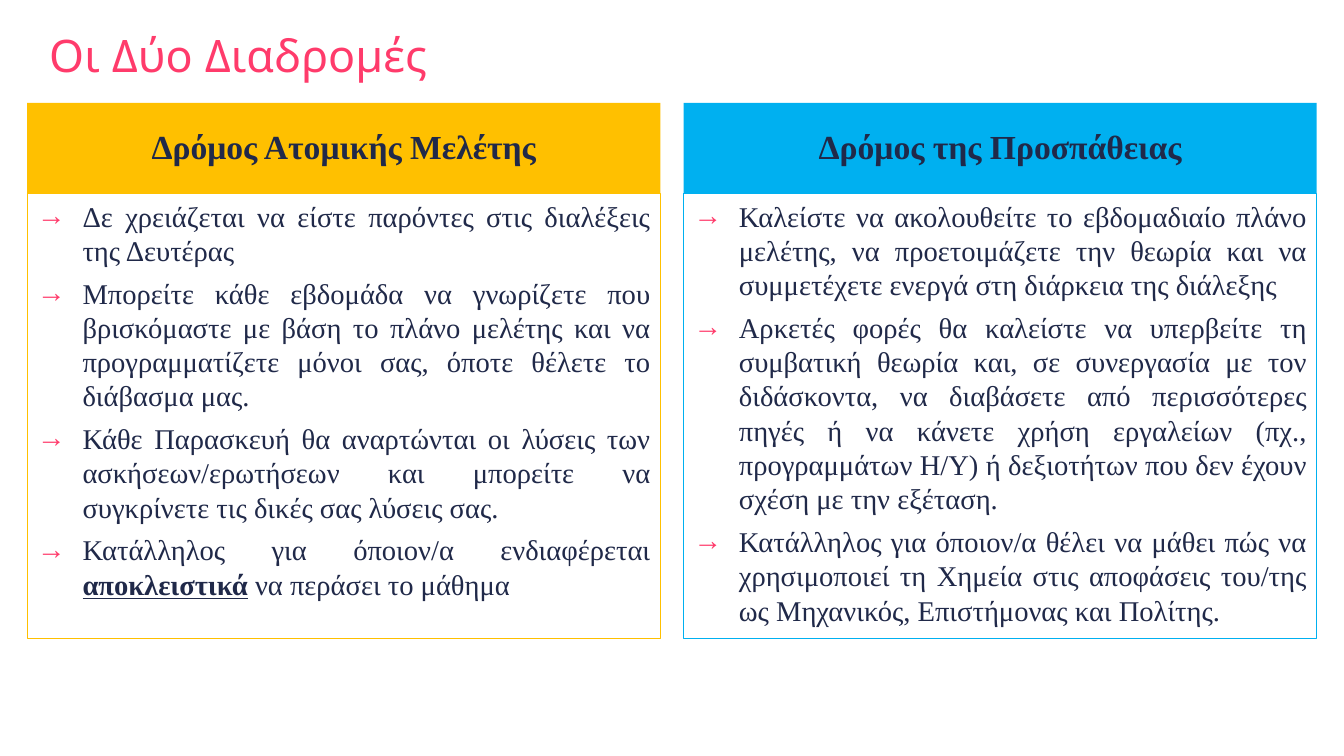
from dataclasses import dataclass
from lxml.etree import SubElement
from pptx import Presentation
from pptx.dml.color import RGBColor
from pptx.enum.shapes import MSO_SHAPE
from pptx.enum.text import MSO_ANCHOR, PP_ALIGN
from pptx.oxml.ns import qn
from pptx.util import Pt

PX = 9144


@dataclass(frozen=True)
class Theme:
    pink: str = "FF3B6B"
    navy: str = "202949"
    yellow: str = "FFC000"
    blue: str = "00B0F0"
    title_font: str = "Quicksand"
    body_font: str = "Times New Roman"
    title_size: float = 32
    heading_size: float = 24
    body_size: float = 20.4


def add_rect(s, left, top, width, height):
    sp = s.shapes.add_shape(MSO_SHAPE.RECTANGLE, left * PX, top * PX, width * PX, height * PX)
    sp.shadow.inherit = False
    sp.text_frame.word_wrap = True
    return sp


def style(font, name, size, color):
    font.name = name
    font.size = Pt(size)
    font.color.rgb = RGBColor.from_string(color)


theme = Theme()
paths = [
    (theme.yellow, "Δρόμος Ατομικής Μελέτης", [
        ["Δε χρειάζεται να είστε παρόντες στις διαλέξεις της Δευτέρας"],
        ["Μπορείτε κάθε εβδομάδα να γνωρίζετε που βρισκόμαστε με βάση το πλάνο μελέτης και να προγραμματίζετε μόνοι σας, όποτε θέλετε το διάβασμα μας."],
        ["Κάθε Παρασκευή θα αναρτώνται οι λύσεις των ασκήσεων/ερωτήσεων και μπορείτε να συγκρίνετε τις δικές σας λύσεις σας."],
        ["Κατάλληλος για όποιον/α ενδιαφέρεται ", "αποκλειστικά", " να περάσει το μάθημα"],
    ]),
    (theme.blue, "Δρόμος της Προσπάθειας", [
        ["Καλείστε να ακολουθείτε το εβδομαδιαίο πλάνο μελέτης, να προετοιμάζετε την θεωρία και να συμμετέχετε ενεργά στη διάρκεια της διάλεξης"],
        ["Αρκετές φορές θα καλείστε να υπερβείτε τη συμβατική θεωρία και, σε συνεργασία με τον διδάσκοντα, να διαβάσετε από περισσότερες πηγές ή να κάνετε χρήση εργαλείων (πχ., προγραμμάτων Η/Υ) ή δεξιοτήτων που δεν έχουν σχέση με την εξέταση."],
        ["Κατάλληλος για όποιον/α θέλει να μάθει πώς να χρησιμοποιεί τη Χημεία στις αποφάσεις του/της ως Μηχανικός, Επιστήμονας και Πολίτης."],
    ]),
]

prs = Presentation()
prs.slide_width = 1333 * PX
prs.slide_height = 750 * PX
s = prs.slides.add_slide(prs.slide_layouts[6])

tf = s.shapes.add_textbox(39 * PX, 29 * PX, 1150 * PX, 62 * PX).text_frame
tf.word_wrap = True
tf.text = "Οι Δύο Διαδρομές"
p = tf.paragraphs[0]
p.line_spacing = 0.9
style(p.runs[0].font, theme.title_font, theme.title_size, theme.pink)

for i, (color, heading, points) in enumerate(paths):
    left = 27 + i * 651

    sp = add_rect(s, left, 102, 628, 90)
    sp.fill.solid()
    sp.fill.fore_color.rgb = RGBColor.from_string(color)
    sp.line.fill.background()
    tf = sp.text_frame
    tf.vertical_anchor = MSO_ANCHOR.MIDDLE
    tf.text = heading
    p = tf.paragraphs[0]
    p.alignment = PP_ALIGN.CENTER
    p.line_spacing = 0.9
    style(p.runs[0].font, theme.body_font, theme.heading_size, theme.navy)
    p.runs[0].font.bold = True

    sp = add_rect(s, left, 192, 628, 441)
    sp.fill.background()
    sp.line.color.rgb = RGBColor.from_string(color)
    sp.line.width = Pt(0.75)
    tf = sp.text_frame
    tf.vertical_anchor = MSO_ANCHOR.TOP
    for n, parts in enumerate(points):
        p = tf.add_paragraph() if n else tf.paragraphs[0]
        p.alignment = PP_ALIGN.JUSTIFY
        p.space_after = Pt(6)
        pPr = p._p.get_or_add_pPr()
        pPr.set("marL", str(45 * PX))
        pPr.set("indent", str(-45 * PX))
        SubElement(SubElement(pPr, qn("a:buClr")), qn("a:srgbClr"), val=theme.pink)
        SubElement(pPr, qn("a:buFont"), typeface=theme.body_font)
        SubElement(pPr, qn("a:buChar"), char="→")
        for k, part in enumerate(parts):
            r = p.add_run()
            r.text = part
            style(r.font, theme.body_font, theme.body_size, theme.navy)
            if k == 1:
                r.font.bold = True
                r.font.underline = True

prs.save("out.pptx")
